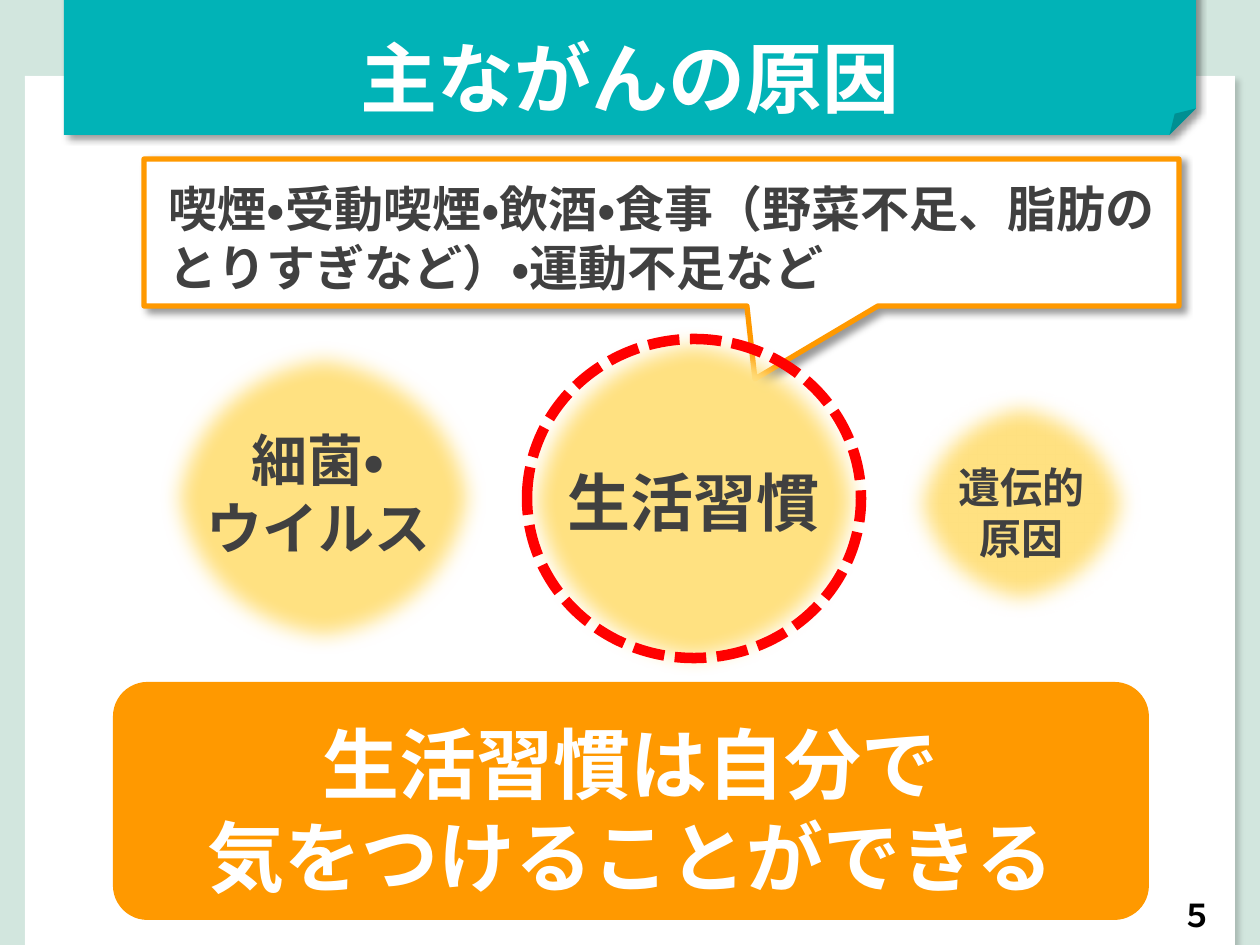
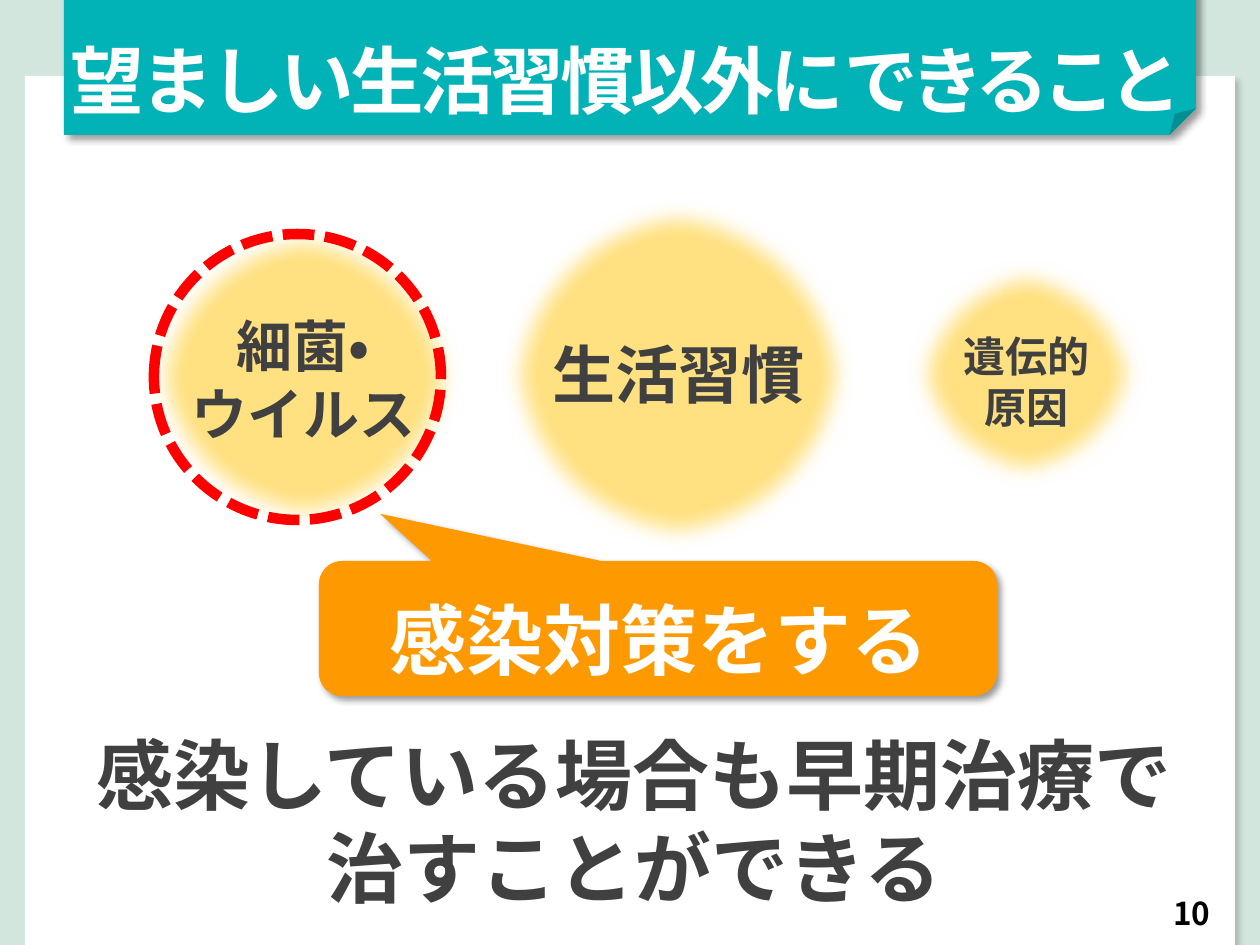
import pptx
import pptx.util
import pptx.dml.color
import pptx.enum.dml
import pptx.enum.shapes
import pptx.enum.text
import pptx.oxml
import pptx.oxml.ns

EMU_PER_PX = 914400 / 126
SHAPE = pptx.enum.shapes.MSO_SHAPE
ANCHOR = pptx.enum.text.MSO_ANCHOR
ALIGN = pptx.enum.text.PP_ALIGN

# Shared look
MINT, TEAL, ORANGE, YELLOW = "D2E6DE", "01B3B7", "FF9900", "FFE181"
WHITE, BLACK, GREY, RED = "FFFFFF", "000000", "404040", "FF0000"
GOTHIC, BODY = "Noto Sans CJK JP", "Calibri"
SOFT_EDGE_PT = 12

# Content: boxes are (left, top, width, height) in px
# A paragraph is a list of (text, letter spacing in points)
BACTERIA = (["細菌・", "ウイルス"], 32)
HABITS = (["生活習慣"], 36)
HEREDITY = (["遺伝的", "原因"], 24)

CAUSES = {
    "title": ([[("主ながんの原因", 0)]], 44, (0, 25, 1260, 106)),
    "number": ("５", (1168, 887, 59, 55)),
    "circles": [  # label, circle box, label box
        (HABITS, (515, 325, 357, 353), (544, 457, 300, 96)),
        (BACTERIA, (159, 340, 329, 316), (140, 420, 357, 161)),
        (HEREDITY, (901, 388, 242, 232), (926, 456, 192, 115)),
    ],
    "ring": (527, 339, 334, 319),
}
EXAMPLES = [[("喫煙・受動喫煙・飲酒・食", 0), ("事", -3),
             ("（野菜不足、脂肪のとりすぎなど", 0), ("）", -15),
             ("・運動不足など", 0)]]
EXAMPLES_OUTLINE = [(144, 159), (1179, 159), (1179, 306), (878, 306),
                    (755, 379), (747, 306), (144, 306)]
MESSAGE = ["生活習慣は自分で", "気をつけることができる"]

ACTIONS = {
    "title": ([[("望ましい生活習慣以外に", -2), ("できること", -4)]], 42,
              (25, 29, 1203, 102)),
    "number": ("10", (1148, 885, 88, 55)),
    "circles": [
        (HABITS, (500, 198, 357, 353), (529, 330, 300, 96)),
        (BACTERIA, (144, 222, 319, 310), (166, 306, 275, 127)),
        (HEREDITY, (906, 258, 242, 232), (931, 325, 192, 115)),
    ],
    "ring": (154, 234, 287, 286),
}
COUNTERMEASURE = ["感染対策をする"]
TREATMENT = ["感染している場合も早期治療で", "治すことができる"]


def px(value):
    return round(value * EMU_PER_PX)


def color(value):
    return pptx.dml.color.RGBColor.from_string(value)


def add_effect(shape, xml):
    """Replace the effect list of a shape with one effect."""
    shape.shadow.inherit = False
    effects = shape._element.spPr.find(pptx.oxml.ns.qn("a:effectLst"))
    namespace = pptx.oxml.ns.nsdecls("a")
    effects.append(pptx.oxml.parse_xml(xml.replace(" ", f" {namespace} ", 1)))


def add_shadow(shape, opacity=40, blur=4, distance=3):
    add_effect(shape, f'<a:outerShdw blurRad="{blur * 12700}" dist="{distance * 12700}" '
                      'dir="2700000" algn="tl" rotWithShape="0"><a:srgbClr val="000000">'
                      f'<a:alpha val="{opacity * 1000}"/></a:srgbClr></a:outerShdw>')


def paint(shape, fill=None, line=None, width=0):
    shape.shadow.inherit = False
    if fill:
        shape.fill.solid()
        shape.fill.fore_color.rgb = color(fill)
    else:
        shape.fill.background()
    if line:
        shape.line.color.rgb = color(line)
        shape.line.width = pptx.util.Pt(width)
    else:
        shape.line.fill.background()
    return shape


def add_block(shapes, kind, box, **style):
    return paint(shapes.add_shape(kind, *map(px, box)), **style)


def write(shape, paragraphs, size, font=GOTHIC, ink=WHITE, align=ALIGN.CENTER,
          anchor=ANCHOR.TOP, insets=(13, 6, 13, 6)):
    """Fill a shape with text; a plain string is a paragraph of one span."""
    frame = shape.text_frame
    frame.word_wrap = True
    frame.vertical_anchor = anchor
    (frame.margin_left, frame.margin_top,
     frame.margin_right, frame.margin_bottom) = map(px, insets)
    for index, spans in enumerate(paragraphs):
        para = frame.add_paragraph() if index else frame.paragraphs[0]
        para.alignment = align
        for text, spacing in [(spans, 0)] if isinstance(spans, str) else spans:
            span = para.add_run()
            span.text = text
            span.font.size = pptx.util.Pt(size)
            span.font.bold = True
            span.font.name = font
            span.font.color.rgb = color(ink)
            properties = span._r.get_or_add_rPr()
            properties.set("lang", "ja-JP")
            if spacing:
                properties.set("spc", str(spacing * 100))
            if font == GOTHIC:  # body text keeps the theme's East Asian font
                east_asian = pptx.oxml.parse_xml(
                    f'<a:ea {pptx.oxml.ns.nsdecls("a")} typeface="{font}"/>')
                properties.find(pptx.oxml.ns.qn("a:latin")).addnext(east_asian)


def add_label(shapes, box, paragraphs, size, **style):
    write(shapes.add_textbox(*map(px, box)), paragraphs, size, **style)


def add_page(deck, content):
    """Start a page with the shared backdrop, title band and number."""
    page = deck.slides.add_slide(deck.slide_layouts[6])
    shapes = page.shapes
    add_block(shapes, SHAPE.RECTANGLE, (0, 0, 1260, 945), fill=MINT)
    sheet = add_block(shapes, SHAPE.RECTANGLE, (25, 76, 1210, 890), fill=WHITE)
    add_shadow(sheet, opacity=18, blur=3, distance=4)
    band = add_block(shapes, SHAPE.FOLDED_CORNER, (64, -24, 1132, 159), fill=TEAL)
    add_shadow(band)
    title, size, box = content["title"]
    add_label(shapes, box, title, size)
    number, box = content["number"]
    add_label(shapes, box, [number], 18, ink=BLACK, anchor=ANCHOR.MIDDLE)
    return page


def add_circles(page, content):
    """Draw the soft circles with labels, then the dashed ring."""
    for (lines, size), circle_box, label_box in content["circles"]:
        group = page.shapes.add_group_shape()
        circle = add_block(group.shapes, SHAPE.OVAL, circle_box, fill=YELLOW)
        add_effect(circle, f'<a:softEdge rad="{SOFT_EDGE_PT * 12700}"/>')
        add_label(group.shapes, label_box, lines, size, font=BODY, ink=GREY)
    ring = add_block(page.shapes, SHAPE.OVAL, content["ring"], line=RED, width=6)
    ring.line.dash_style = pptx.enum.dml.MSO_LINE.SQUARE_DOT


def build_causes(deck):
    page = add_page(deck, CAUSES)
    banner = add_block(page.shapes, SHAPE.ROUNDED_RECTANGLE,
                       (113, 682, 1036, 238), fill=ORANGE)
    banner.adjustments[0] = 0.145
    write(banner, MESSAGE, 44, insets=(13, 25, 13, 6))

    # Speech bubble pointing at the lifestyle circle
    start, *rest = EXAMPLES_OUTLINE
    builder = page.shapes.build_freeform(*start, scale=EMU_PER_PX)
    builder.add_line_segments(rest, close=True)
    bubble = paint(builder.convert_to_shape(), fill=WHITE, line=ORANGE, width=3)
    add_shadow(bubble)
    write(bubble, EXAMPLES, 28, font=BODY, ink=GREY, align=ALIGN.LEFT,
          insets=(25, 20, 13, 6))
    add_circles(page, CAUSES)


def build_actions(deck):
    page = add_page(deck, ACTIONS)
    add_label(page.shapes, (55, 722, 1159, 199), TREATMENT, 44, ink=GREY)
    callout = add_block(page.shapes, SHAPE.ROUNDED_RECTANGULAR_CALLOUT,
                        (319, 561, 678, 135), fill=ORANGE)
    for index, value in enumerate((-0.41, -0.85, 0.17)):
        callout.adjustments[index] = value
    add_shadow(callout)
    write(callout, COUNTERMEASURE, 44, insets=(15, 25, 13, 6))
    add_circles(page, ACTIONS)


def main():
    deck = pptx.Presentation()
    deck.slide_width, deck.slide_height = px(1260), px(945)
    build_causes(deck)
    build_actions(deck)
    deck.save("out.pptx")


if __name__ == "__main__":
    main()
